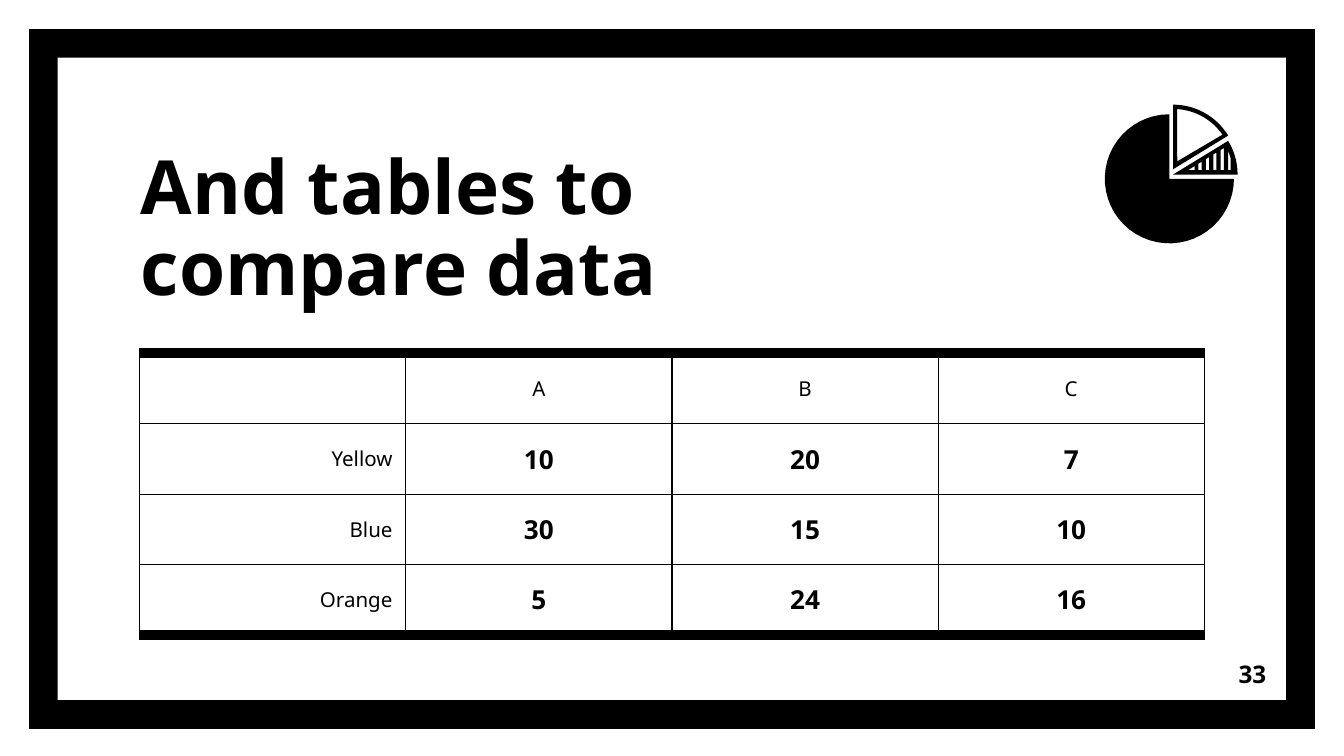
import math

import pptx
import pptx.dml.color
import pptx.enum.shapes
import pptx.enum.text
import pptx.oxml.ns
import pptx.util
from lxml import etree

Cm = pptx.util.Cm
Pt = pptx.util.Pt
Align = pptx.enum.text.PP_ALIGN
Anchor = pptx.enum.text.MSO_ANCHOR

THEME = {
    "font": "Noto Sans",
    "ink": pptx.dml.color.RGBColor(0, 0, 0),
    "title": Pt(40),
    "label": Pt(11),
    "value": Pt(14),
    "number": Pt(13),
    "thin": Pt(0.75),
    "thick": Pt(6),
}


def style_text(para, size, bold, align):
    para.alignment = align
    for span in para.runs:
        span.font.name = THEME["font"]
        span.font.size = THEME[size]
        span.font.bold = bold
        span.font.color.rgb = THEME["ink"]


def arc(radius, start, end, steps=40):
    """Points in cm around the origin, angles in degrees, y pointing up."""
    angles = [math.radians(start + (end - start) * i / steps) for i in range(steps + 1)]
    return [(radius * math.cos(a), radius * math.sin(a)) for a in angles]


deck = pptx.Presentation()
deck.slide_width = Cm(25.4)
deck.slide_height = Cm(14.29)
page = deck.slides.add_slide(deck.slide_layouts[5])

# Border around the page
border = page.shapes.add_shape(
    pptx.enum.shapes.MSO_SHAPE.FRAME, Cm(0.55), Cm(0.55), Cm(24.3), Cm(13.23))
border.adjustments[0] = 0.041
border.shadow.inherit = False
border.fill.solid()
border.fill.fore_color.rgb = THEME["ink"]
border.line.fill.background()

# Title
title = page.shapes.title
title.left, title.top, title.width, title.height = Cm(2.41), Cm(2.36), Cm(14.15), Cm(3.78)
frame = title.text_frame
frame.text = "And tables to compare data"
frame.word_wrap = True
frame.auto_size = pptx.enum.text.MSO_AUTO_SIZE.NONE
frame.vertical_anchor = Anchor.BOTTOM
frame.margin_left = frame.margin_right = frame.margin_top = frame.margin_bottom = Cm(0.25)
frame.paragraphs[0].line_spacing = 0.9
style_text(frame.paragraphs[0], "title", True, Align.LEFT)

# Comparison table
rows = [
    ["", "A", "B", "C"],
    ["Yellow", "10", "20", "7"],
    ["Blue", "30", "15", "10"],
    ["Orange", "5", "24", "16"],
]
column_width, row_height = Cm(5.03), Cm(1.33)
table = page.shapes.add_table(
    len(rows), len(rows[0]), Cm(2.64), Cm(6.68),
    column_width * len(rows[0]), row_height * len(rows)).table
table.first_row = table.horz_banding = False
for column in table.columns:
    column.width = column_width
for r, texts in enumerate(rows):
    table.rows[r].height = row_height
    for c, text in enumerate(texts):
        cell = table.cell(r, c)
        cell.vertical_anchor = Anchor.MIDDLE
        cell.margin_left = cell.margin_right = Cm(0.25)
        cell.margin_top = cell.margin_bottom = Cm(0.18)
        cell.text_frame.text = text
        is_value = r > 0 and c > 0
        style_text(cell.text_frame.paragraphs[0], "value" if is_value else "label",
                   is_value, Align.CENTER if c else Align.RIGHT)
        properties = cell._tc.get_or_add_tcPr()
        for side in "LRTB":
            outer = (side == "T" and r == 0) or (side == "B" and r == len(rows) - 1)
            edge = etree.SubElement(properties, pptx.oxml.ns.qn("a:ln" + side),
                                    w=str(THEME["thick" if outer else "thin"]))
            fill = etree.SubElement(edge, pptx.oxml.ns.qn("a:solidFill"))
            etree.SubElement(fill, pptx.oxml.ns.qn("a:srgbClr"), val=str(THEME["ink"]))
        cell.fill.background()

# Pie icon: each part has a centre and its contours; inner contours are holes
radius, split = 1.22, 31.4
stripes = [[(0.28, 0.08), (0.41, 0.08), (0.41, 0.16)]]
for i in range(4):
    left = 0.48 + 0.14 * i
    right = left + 0.06
    stripes.append([(left, 0.08), (right, 0.08),
                    (right, 0.08 + 0.62 * (right - 0.28)),
                    (left, 0.08 + 0.62 * (left - 0.28))])
stripes.append([(1.04, 0.08), (1.09, 0.08), (1.09, 0.3), (1.04, 0.46)])
pie_parts = [
    ((22.1, 3.38), [[(0, 0)] + arc(radius, 90, 360)]),
    ((22.17, 3.3), [[(0, 0)] + arc(radius, 0, split)] + stripes),
    ((22.17, 3.2), [[(0, 0)] + arc(radius, split, 90),
                    [(0.08, 0.15)] + arc(1.14, 35, 86.2)]),
]
icon = page.shapes.add_group_shape()
for (x, y), contours in pie_parts:
    placed = [[(Cm(x + dx), Cm(y - dy)) for dx, dy in contour] for contour in contours]
    builder = icon.shapes.build_freeform(*placed[0][0])
    for contour in placed:
        builder.move_to(*contour[0])
        builder.add_line_segments(contour[1:], close=True)
    part = builder.convert_to_shape()
    part.shadow.inherit = False
    part.fill.solid()
    part.fill.fore_color.rgb = THEME["ink"]
    part.line.fill.background()

# Page number
number = page.shapes.add_textbox(Cm(22.66), Cm(12.19), Cm(1.52), Cm(1.09))
frame = number.text_frame
frame.text = "33"
frame.word_wrap = True
frame.vertical_anchor = Anchor.MIDDLE
frame.margin_left = frame.margin_right = frame.margin_top = frame.margin_bottom = Cm(0.25)
style_text(frame.paragraphs[0], "number", True, Align.RIGHT)

deck.save("out.pptx")
